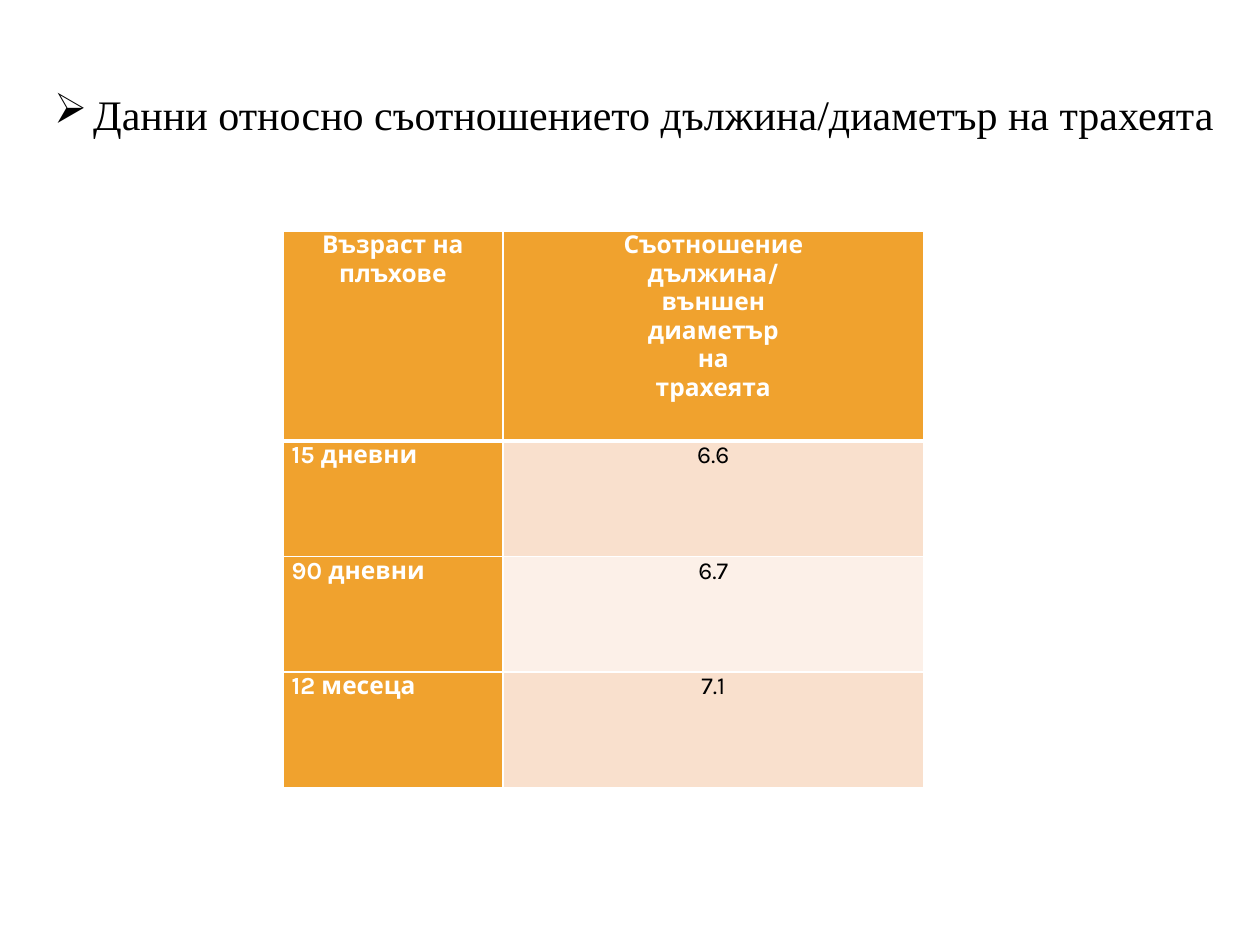
from lxml.etree import SubElement
from pptx import Presentation
from pptx.dml.color import RGBColor as RGB
from pptx.enum.text import MSO_AUTO_SIZE as AutoSize, PP_ALIGN as Align
from pptx.oxml.ns import qn
from pptx.util import Cm, Pt

COLORS = {"white": "FFFFFF", "black": "000000", "header": "F0A22E",
          "band_dark": "F9E0CD", "band_light": "FCF0E8"}
TITLE = "Данни относно съотношението дължина/диаметър на трахеята"
HEADERS = ("Възраст на плъхове",
           "Съотношение\nдължина/\nвъншен\nдиаметър\nна\nтрахеята")
RATIOS = (("15 дневни", "6.6"), ("90 дневни", "6.7"), ("12 месеца", "7.1"))
COL_WIDTHS = (4.44, 8.48)
HEADER_HEIGHT, ROW_HEIGHT = 4.23, 2.33


def write(tf, text, font="Karla", size=14, color="black", bold=False,
          align=Align.LEFT):
    """Fill a text frame, one paragraph for each line of text."""
    for i, line in enumerate(text.split("\n")):
        p = tf.paragraphs[0] if i == 0 else tf.add_paragraph()
        p.alignment = align
        r = p.add_run()
        r.text = line
        r.font.name, r.font.size, r.font.bold = font, Pt(size), bold
        r.font.color.rgb = RGB.from_string(COLORS[color])


def add_title(s):
    tb = s.shapes.add_textbox(Cm(0.84), Cm(1.5), Cm(26.59), Cm(1.45))
    tf = tb.text_frame
    tf.word_wrap = True
    tf.auto_size = AutoSize.SHAPE_TO_FIT_TEXT
    write(tf, TITLE, font="Times New Roman", size=24)
    p = tf.paragraphs[0]
    p.line_spacing = 1.15
    # Arrow bullet with a hanging indent
    pPr = p._p.get_or_add_pPr()
    pPr.set("marL", str(Cm(0.79)))
    pPr.set("indent", str(-Cm(0.79)))
    SubElement(pPr, qn("a:buChar"), char="➢")


def set_borders(cell, **widths):
    """Draw white cell borders; widths are points by side."""
    tcPr = cell._tc.get_or_add_tcPr()
    for side in "LRTB":
        ln = SubElement(tcPr, qn(f"a:ln{side}"), w=str(Pt(widths.get(side, 1))))
        fill = SubElement(ln, qn("a:solidFill"))
        SubElement(fill, qn("a:srgbClr"), val=COLORS["white"])


def style_cell(cell, text, fill, **fmt):
    cell.margin_left = cell.margin_right = Cm(0.18)
    cell.margin_top = cell.margin_bottom = 0
    cell.fill.solid()
    cell.fill.fore_color.rgb = RGB.from_string(COLORS[fill])
    write(cell.text_frame, text, **fmt)


def add_ratio_table(s):
    rows = (HEADERS,) + RATIOS
    heights = [HEADER_HEIGHT] + [ROW_HEIGHT] * len(RATIOS)
    table = s.shapes.add_table(len(rows), len(COL_WIDTHS), Cm(5.7), Cm(4.66),
                               Cm(sum(COL_WIDTHS)), Cm(sum(heights))).table
    for col, width in zip(table.columns, COL_WIDTHS):
        col.width = Cm(width)
    for i, (row, height) in enumerate(zip(rows, heights)):
        table.rows[i].height = Cm(height)
        for j, text in enumerate(row):
            cell = table.cell(i, j)
            # Thick rule between the header and the body
            set_borders(cell, T=3 if i == 1 else 1, B=3 if i == 0 else 1)
            align = Align.CENTER if i == 0 or j == 1 else Align.LEFT
            if i == 0 or j == 0:
                style_cell(cell, text, "header", color="white", bold=True,
                           align=align)
            else:
                band = "band_dark" if i % 2 else "band_light"
                style_cell(cell, text, band, align=align)


def main():
    prs = Presentation()
    prs.slide_width, prs.slide_height = Cm(25.4), Cm(19.05)
    s = prs.slides.add_slide(prs.slide_layouts[6])
    add_ratio_table(s)
    add_title(s)
    prs.save("out.pptx")


if __name__ == "__main__":
    main()
